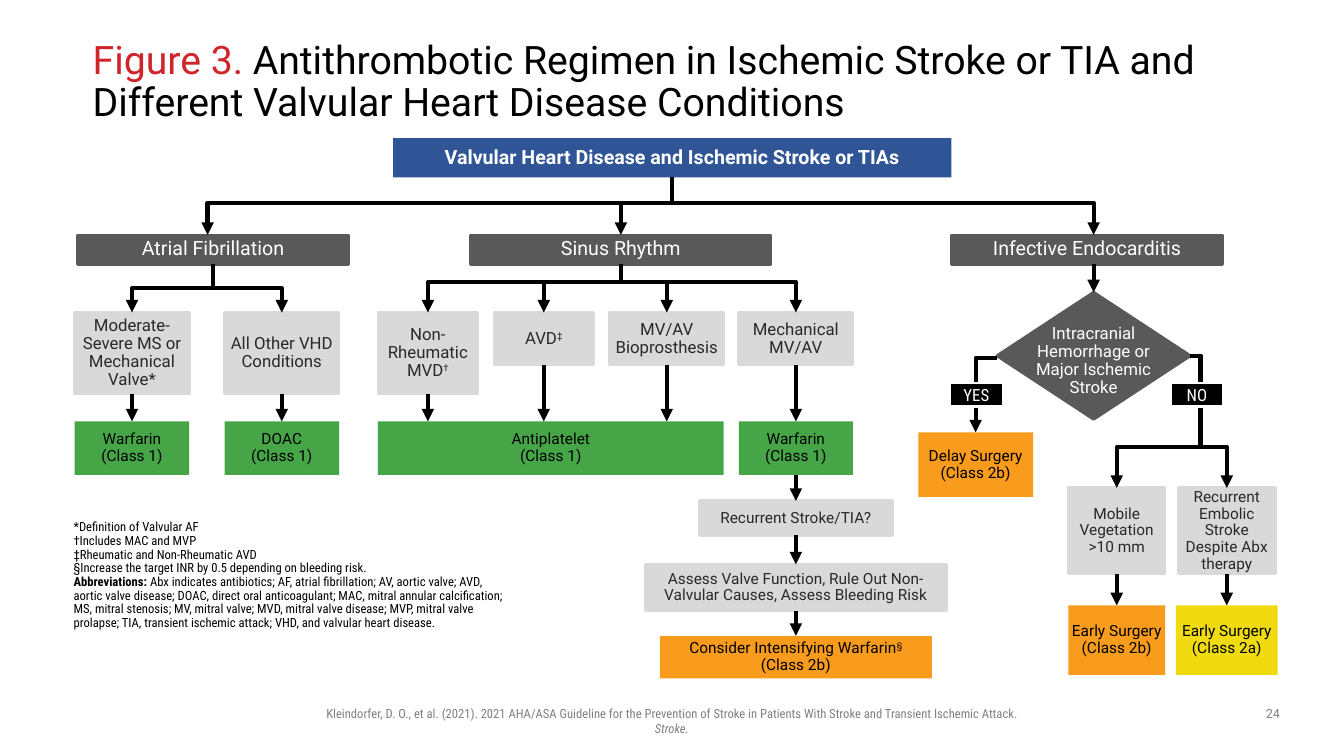
from pptx import Presentation
from pptx import util as u
from pptx.dml.color import RGBColor
from pptx.enum import shapes, text
from pptx.oxml import ns
from lxml import etree

Pt = u.Pt
BLACK, WHITE, RED, GRAY = "000000", "FFFFFF", "CF2429", "808080"
BLUE, DARK, LIGHT, INK = "2F5597", "595959", "D9D9D9", "292929"
GREEN, ORANGE, YELLOW = "46A547", "F99B1D", "F0DB10"
CONDITION_DY, OUTCOME_DY, OUTCOME_H = 55.4, 133.2, 38.2


def rgb(value):
    return RGBColor.from_string(value)


def write(tf, lines, size, color, font="Roboto", align="CENTER", spacing=0.9,
          anchor="MIDDLE", insets=(0, 0, 0, 0)):
    tf.word_wrap = True
    tf.vertical_anchor = getattr(text.MSO_ANCHOR, anchor)
    tf.margin_left, tf.margin_top, tf.margin_right, tf.margin_bottom = map(Pt, insets)
    for i, line in enumerate(lines):
        p = tf.paragraphs[0] if i == 0 else tf.add_paragraph()
        p.alignment = getattr(text.PP_ALIGN, align)
        p.line_spacing = spacing
        for part in [(line, "")] if isinstance(line, str) else line:
            if part == "break":
                p.add_line_break()
                continue
            r = p.add_run()
            r.text, style = part
            r.font.name, r.font.size = font, Pt(size)
            r.font.bold, r.font.italic = style == "bold", style == "italic"
            r.font.color.rgb = rgb(RED if style == "red" else color)
            if style == "sup":
                r.font._element.set("baseline", "30000")


def text_box(s, x, y, w, h, lines, size, color, **options):
    sp = s.shapes.add_textbox(Pt(x), Pt(y), Pt(w), Pt(h))
    write(sp.text_frame, lines, size, color, **options)


def box(s, x, y, w, h, lines, fill, size=11, color=BLACK, border=None, kind="RECTANGLE", **options):
    sp = s.shapes.add_shape(getattr(shapes.MSO_SHAPE, kind), Pt(x), Pt(y), Pt(w), Pt(h))
    sp.shadow.inherit = False
    sp.fill.solid()
    sp.fill.fore_color.rgb = rgb(fill)
    if border:
        sp.line.color.rgb = rgb(border)
        sp.line.width = Pt(2)
    else:
        sp.line.fill.background()
    write(sp.text_frame, lines, size, color, **options)
    return sp


def header(s, x, y, w, label):
    return box(s, x, y, w, 20.9, [label], DARK, 14, WHITE, DARK)


def condition(s, x, y, w, h, lines, size=12):
    return box(s, x, y, w, h, lines, LIGHT, size, INK, LIGHT)


def tag(s, x, y, label):
    box(s, x, y, 38.2, 16.6, [label], BLACK, 12, WHITE, WHITE, font="Roboto Condensed", spacing=1)


def style_line(sp):
    sp.line.color.rgb = rgb(BLACK)
    sp.line.width = Pt(3)
    etree.SubElement(sp.line._get_or_add_ln(), ns.qn("a:tailEnd"), type="triangle")


def straight(s, x, y1, y2):
    cx = s.shapes.add_connector(shapes.MSO_CONNECTOR.STRAIGHT, Pt(x), Pt(y1), Pt(x), Pt(y2))
    style_line(cx)
    etree.SubElement(cx._element.spPr, ns.qn("a:effectLst"))
    return cx


def bent(s, points):
    scaled = [(Pt(x), Pt(y)) for x, y in points]
    fb = s.shapes.build_freeform(*scaled[0])
    fb.add_line_segments(scaled[1:], close=False)
    sp = fb.convert_to_shape()
    sp.shadow.inherit = False
    sp.fill.background()
    style_line(sp)


def middle(sp):
    return (sp.left + sp.width / 2) / 12700


def drop(s, a, b):
    cx = straight(s, middle(a), (a.top + a.height) / 12700, b.top / 12700)
    cx.begin_connect(a, 2)
    if abs(middle(a) - middle(b)) < 0.1:
        cx.end_connect(b, 0)


def branch(s, stem, bus_y, targets, ends=None):
    stem_x = stem[-1][0]
    left, right = ends or (middle(targets[0]), middle(targets[-1]))
    for x in (left, right):
        bent(s, stem + [(stem_x, bus_y), (x, bus_y), (x, targets[0].top / 12700)])
    for target in targets[1:-1]:
        straight(s, middle(target), bus_y, target.top / 12700).end_connect(target, 0)


def fibrillation_region(s, x, y, w):
    head = header(s, x, y, w, "Atrial Fibrillation")
    columns = [(["Moderate-Severe MS or Mechanical Valve*"], "Warfarin"),
               (["All Other VHD Conditions"], "DOAC")]
    targets = []
    for i, (lines, drug) in enumerate(columns):
        left = x - 2 + 107 * i
        sp = condition(s, left, y + CONDITION_DY, 81.8, 58.3, lines)
        drop(s, sp, box(s, left, y + OUTCOME_DY, 81.8, OUTCOME_H, [drug, "(Class 1)"], GREEN))
        targets.append(sp)
    branch(s, [(middle(head), y + 20.9)], y + 38.2, targets)
    return head


def sinus_region(s, x, y, w):
    head = header(s, x + 66.2, y, 214.6, "Sinus Rhythm")
    columns = [(0, 71.3, 58.3, [[("Non-Rheumatic MVD", ""), ("†", "sup")]]),
               (82.8, 71.3, 37.4, [[("AVD", ""), ("‡", "sup")]]),
               (165.6, 81.4, 37.4, ["MV/AV Bioprosthesis"]),
               (w - 81.4, 81.4, 37.4, ["Mechanical MV/AV"])]
    targets = [condition(s, x + dx, y + CONDITION_DY, cw, ch, lines) for dx, cw, ch, lines in columns]
    antiplatelet = box(s, x, y + OUTCOME_DY, 247, OUTCOME_H, ["Antiplatelet", "(Class 1)"], GREEN)
    warfarin = box(s, x + w - 81.4, y + OUTCOME_DY, 81.4, OUTCOME_H, ["Warfarin", "(Class 1)"], GREEN)
    for target in targets:
        drop(s, target, warfarin if target is targets[-1] else antiplatelet)
    branch(s, [(middle(head), y + 20.9)], y + 33.8, targets)

    axis = middle(warfarin)
    recurrent = condition(s, axis - 68.75, y + 190, 137.5, 24.5, ["Recurrent Stroke/TIA?"], 11)
    assess = condition(s, axis - 107.65, y + 235.4, 215.3, 33.1,
                       ["Assess Valve Function, Rule Out Non-Valvular Causes, Assess Bleeding Risk"], 11)
    intensify = box(s, axis - 97.2, y + 286.5, 194.4, 30.2,
                    [[("Consider Intensifying Warfarin", ""), ("§", "sup")], "(Class 2b)"], ORANGE)
    chain = [warfarin, recurrent, assess, intensify]
    for upper, lower in zip(chain, chain[1:]):
        drop(s, upper, lower)
    return head


def endocarditis_region(s, x, y, w):
    head = header(s, x, y, w, "Infective Endocarditis")
    hemorrhage = box(s, x + 32.4, y + 41, 138.2, 90.7,
                     ["Intracranial", "Hemorrhage or", "Major Ischemic", "Stroke"],
                     DARK, 12, WHITE, DARK, kind="DIAMOND", insets=(0, 7.2, 0, 0))
    hemorrhage.text_frame.word_wrap = False
    straight(s, middle(hemorrhage), y + 20.9, y + 41).end_connect(hemorrhage, 0)

    delay = box(s, x - 23.8, y + 141.1, 82, 46.1, ["Delay Surgery", "(Class 2b)"], ORANGE)
    bent(s, [(x + 32.4, y + 87.8), (middle(delay), y + 87.8), (middle(delay), y + 141.1)])

    columns = [("Mobile Vegetation >10 mm", "(Class 2b)", ORANGE, 69.1),
               ("Recurrent Embolic Stroke Despite Abx therapy", "(Class 2a)", YELLOW, 72.7)]
    targets = []
    for i, (finding, grade, fill, width) in enumerate(columns):
        axis = x + 118 + 78.6 * i
        sp = condition(s, axis - 34.55, y + 180.7, 69.1, 61.2, [finding], 11)
        drop(s, sp, box(s, axis - width / 2, y + 264.6, width, 49.7, ["Early Surgery", grade], fill))
        targets.append(sp)
    branch(s, [(x + 170.6, y + 86.4), (x + 177.8, y + 86.4)], y + 151.7, targets)
    tag(s, x - 1.4, y + 105.8, "YES")
    tag(s, x + 156.2, y + 105.8, "NO")
    return head


def notes_region(s, x, y, w, h):
    text_box(s, x, y, w, h, [
        "*Definition of Valvular AF",
        "†Includes MAC and MVP",
        "‡Rheumatic and Non-Rheumatic AVD",
        "§Increase the target INR by 0.5 depending on bleeding risk.",
        [("Abbreviations: ", "bold"),
         ("Abx indicates antibiotics; AF, atrial fibrillation; AV, aortic valve; AVD, aortic valve "
          "disease; DOAC, direct oral anticoagulant; MAC, mitral annular calcification; MS, mitral "
          "stenosis; MV, mitral valve; MVD, mitral valve disease; MVP, mitral valve prolapse; TIA, "
          "transient ischemic attack; VHD, and valvular heart disease.", "")],
    ], 9, BLACK, font="Roboto Condensed", align="LEFT", anchor="TOP", insets=(0, 3.6, 7.2, 3.6))


def footer_region(s, x, y, w, h):
    margins = dict(spacing=1, anchor="TOP", insets=(7.2, 3.6, 7.2, 3.6))
    text_box(s, x, y, w, h, [[
        ("Kleindorfer, D. O., et al. (2021). 2021 AHA/ASA Guideline for the Prevention of Stroke in "
         "Patients With Stroke and Transient Ischemic Attack.", ""), "break", ("Stroke.", "italic"),
    ]], 9, GRAY, font="Roboto Condensed", **margins)
    text_box(s, x + 682.5, y, 30.2, h, ["24"], 9, GRAY, **margins)


def main():
    prs = Presentation()
    prs.slide_width, prs.slide_height = Pt(960), Pt(540)
    s = prs.slides.add_slide(prs.slide_layouts[6])
    text_box(s, 66.2, 28.8, 790.6, 60.5, [[
        ("Figure 3. ", "red"),
        ("Antithrombotic Regimen in Ischemic Stroke or TIA and Different Valvular Heart Disease Conditions", ""),
    ]], 28, BLACK, align="LEFT")
    root = box(s, 280.8, 98.6, 398.9, 28.1,
               [[("Valvular Heart Disease and Ischemic Stroke or TIAs", "bold")]], BLUE, 14, WHITE)
    heads = [fibrillation_region(s, 55.4, 167.8, 193.7),
             sinus_region(s, 270, 167.8, 339.2),
             endocarditis_region(s, 679.7, 167.8, 193.7)]
    branch(s, [(middle(root), 126.7)], 145, heads, ends=(148.3, 781.2))
    notes_region(s, 52.6, 368.6, 321.1, 55.4)
    footer_region(s, 211.7, 500.4, 536.4, 18)
    prs.save("out.pptx")


if __name__ == "__main__":
    main()
